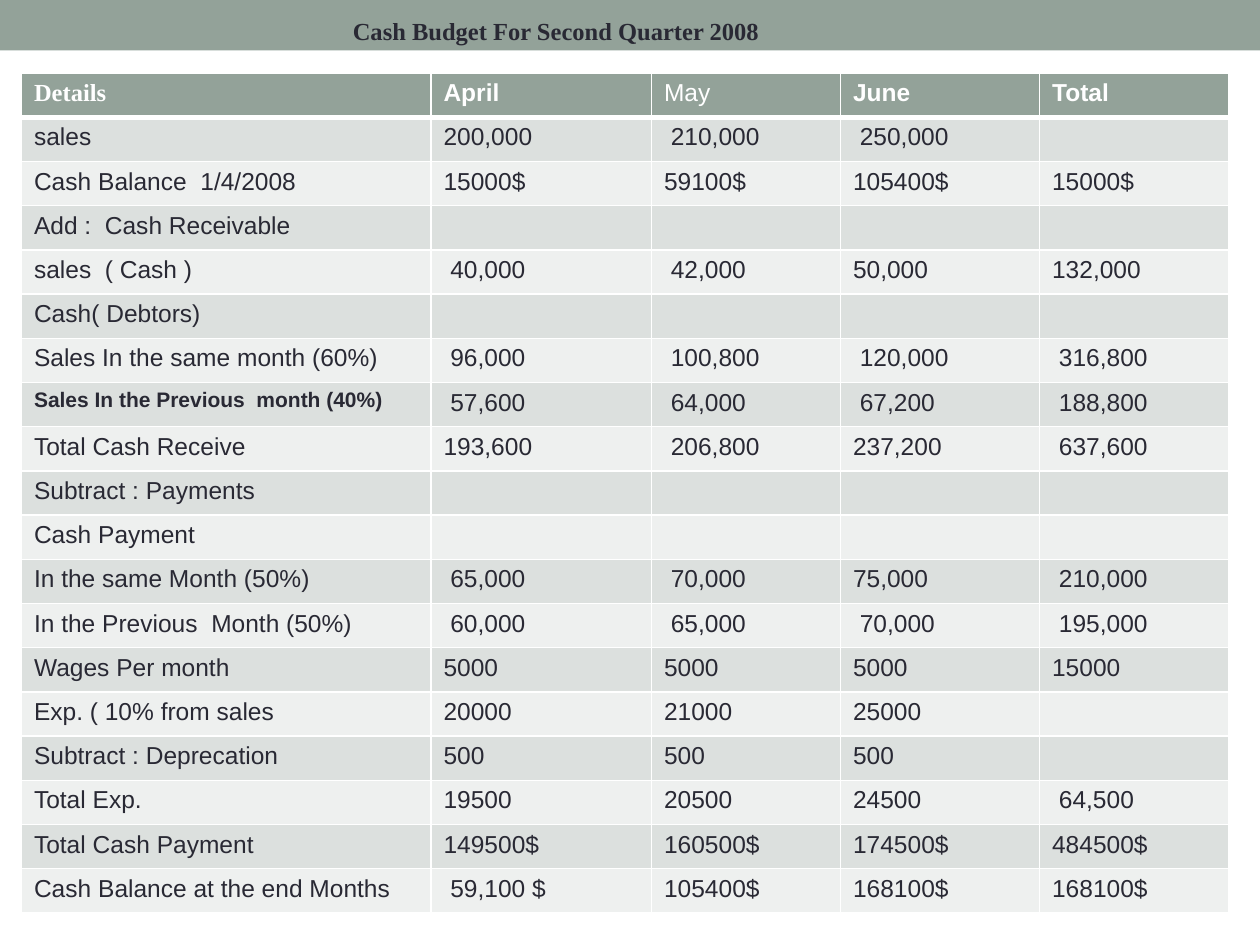
from lxml import etree
from pptx import Presentation
from pptx.dml.color import RGBColor
from pptx.enum.shapes import MSO_SHAPE
from pptx.enum.text import MSO_ANCHOR, PP_ALIGN
from pptx.oxml.ns import qn
from pptx.util import Inches, Pt

RECTANGLE = MSO_SHAPE.RECTANGLE
LEFT = PP_ALIGN.LEFT
TOP = MSO_ANCHOR.TOP
TITLE_ONLY = 5

TITLE = "Cash Budget For Second Quarter 2008"
COLUMN_WIDTHS = [3.25, 1.75, 1.5, 1.58, 1.5]
TABLE_HEIGHT = 6.67
BUDGET = [
    ["Details", "April", "May", "June", "Total"],
    ["sales", "200,000", " 210,000", " 250,000", ""],
    ["Cash Balance  1/4/2008", "15000$", "59100$", "105400$", "15000$"],
    ["Add :  Cash Receivable", "", "", "", ""],
    ["sales  ( Cash )", " 40,000", " 42,000", "50,000", "132,000"],
    ["Cash( Debtors)", "", "", "", ""],
    ["Sales In the same month (60%)", " 96,000", " 100,800", " 120,000", " 316,800"],
    ["Sales In the Previous  month (40%)", " 57,600", " 64,000", " 67,200", " 188,800"],
    ["Total Cash Receive", "193,600", " 206,800", "237,200", " 637,600"],
    ["Subtract : Payments", "", "", "", ""],
    ["Cash Payment", "", "", "", ""],
    ["In the same Month (50%)", " 65,000", " 70,000", "75,000", " 210,000"],
    ["In the Previous  Month (50%)", " 60,000", " 65,000", " 70,000", " 195,000"],
    ["Wages Per month", "5000", "5000", "5000", "15000"],
    ["Exp. ( 10% from sales", "20000", "21000", "25000", ""],
    ["Subtract : Deprecation", "500", "500", "500", ""],
    ["Total Exp.", "19500", "20500", "24500", " 64,500"],
    ["Total Cash Payment", "149500$", "160500$", "174500$", "484500$"],
    ["Cash Balance at the end Months", " 59,100 $", "105400$", "168100$", "168100$"],
]
CELL_FORMATS = {
    (0, 0): {"font": "Times New Roman"},
    (0, 2): {"bold": False},
    (7, 0): {"size": 12, "bold": True},
}


def color(value):
    return RGBColor.from_string(value)


def write(frame, text, size=14, font="Arial", fill="292934", bold=False):
    paragraph = frame.paragraphs[0]
    paragraph.alignment = LEFT
    if not text:
        # An empty cell keeps the text size so that its row does not grow.
        etree.SubElement(paragraph._p, qn("a:endParaRPr"), sz=str(size * 100))
        return
    run = paragraph.add_run()
    run.text = text
    run.font.size = Pt(size)
    run.font.name = font
    run.font.bold = bold
    run.font.color.rgb = color(fill)


def set_borders(cell, value, **widths):
    properties = cell._tc.get_or_add_tcPr()
    for side in ("L", "R", "T", "B"):
        width = Pt(widths.get(side, 1))
        line = etree.SubElement(properties, qn(f"a:ln{side}"), w=str(width))
        solid = etree.SubElement(line, qn("a:solidFill"))
        etree.SubElement(solid, qn("a:srgbClr"), val=value)


class BudgetSlide:
    accent = "93A299"
    white = "FFFFFF"
    bands = ("EEF0EF", "DCE0DE")

    def __init__(self, presentation):
        self.slide = presentation.slides.add_slide(presentation.slide_layouts[TITLE_ONLY])

    def bar(self, left, top, width, height):
        shape = self.slide.shapes.add_shape(
            RECTANGLE, Inches(left), Inches(top), Inches(width), Inches(height))
        shape.shadow.inherit = False
        shape.fill.solid()
        shape.fill.fore_color.rgb = color(self.accent)
        shape.line.fill.background()

    def title(self, text, left, top, width, height):
        """Fill the title placeholder and bring it in front of the bar."""
        title = self.slide.shapes.title
        title.left, title.top = Inches(left), Inches(top)
        title.width, title.height = Inches(width), Inches(height)
        title.text_frame.word_wrap = True
        title.text_frame.vertical_anchor = TOP
        write(title.text_frame, text, font="Times New Roman", bold=True)
        self.slide.shapes._spTree.append(title._element)

    def table(self, rows, widths, left, top, height):
        table = self.slide.shapes.add_table(
            len(rows), len(widths), Inches(left), Inches(top),
            Inches(sum(widths)), Inches(height)).table
        for column, width in zip(table.columns, widths):
            column.width = Inches(width)
        for row_index, texts in enumerate(rows):
            table.rows[row_index].height = Inches(height / len(rows))
            for column_index, text in enumerate(texts):
                cell = table.cell(row_index, column_index)
                self.style_cell(cell, row_index)
                style = {"fill": self.white, "bold": True} if row_index == 0 else {}
                style.update(CELL_FORMATS.get((row_index, column_index), {}))
                write(cell.text_frame, text, **style)

    def style_cell(self, cell, row_index):
        set_borders(cell, self.white,
                    T=3 if row_index == 1 else 1, B=3 if row_index == 0 else 1)
        cell.fill.solid()
        band = self.bands[row_index % 2] if row_index else self.accent
        cell.fill.fore_color.rgb = color(band)


def main():
    presentation = Presentation()
    presentation.slide_width = Inches(10)
    presentation.slide_height = Inches(7.5)
    budget = BudgetSlide(presentation)
    budget.bar(0, 0, 10, 0.4)
    budget.table(BUDGET, COLUMN_WIDTHS, 0.17, 0.58, TABLE_HEIGHT)
    budget.title(TITLE, 2.7, 0.08, 4.13, 0.34)
    presentation.save("out.pptx")


if __name__ == "__main__":
    main()
